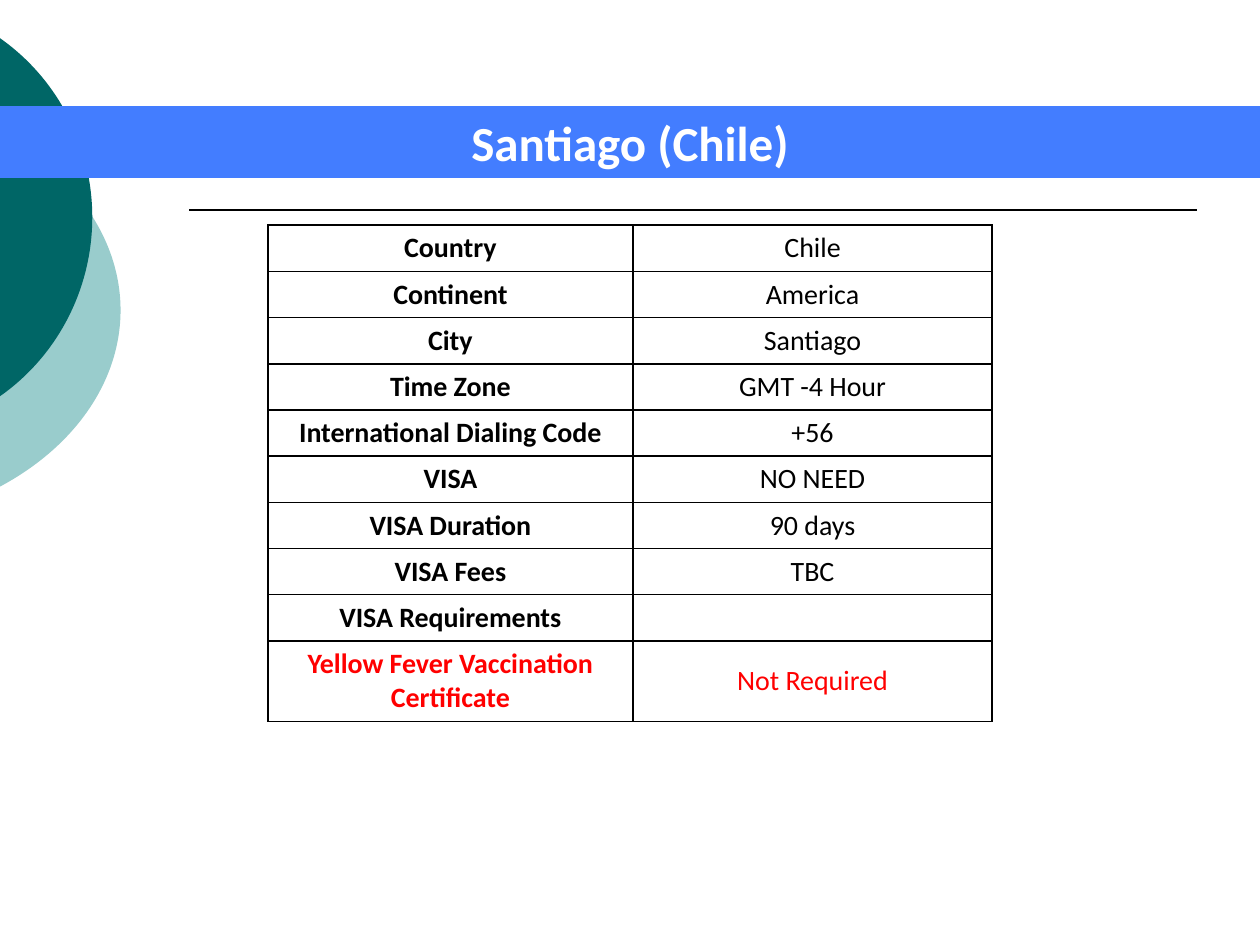
import math
from dataclasses import dataclass

from lxml import etree
from pptx import Presentation
from pptx.dml.color import RGBColor
from pptx.enum import shapes, text
from pptx.oxml import ns
from pptx.util import Cm, Pt


@dataclass(frozen=True)
class Theme:
    font: str = "Calibri"
    title_size: int = 28
    cell_size: int = 16
    line_width: int = 1
    light_teal: str = "99CCCC"
    dark_teal: str = "006666"
    banner: str = "437DFF"
    white: str = "FFFFFF"
    ink: str = "000000"
    alert: str = "FF0000"


THEME = Theme()
SLIDE_WIDTH, SLIDE_HEIGHT = 25.4, 19.05
CELL_MARGIN = 0.12
FACTS = [
    ("Country", "Chile"),
    ("Continent", "America"),
    ("City", "Santiago"),
    ("Time Zone", "GMT -4 Hour"),
    ("International Dialing Code", "+56"),
    ("VISA", "NO NEED"),
    ("VISA Duration", "90 days"),
    ("VISA Fees", "TBC"),
    ("VISA Requirements", ""),
    ("Yellow Fever Vaccination Certificate", "Not Required"),
]


def style_text(frame, size, color, bold):
    frame.vertical_anchor = text.MSO_ANCHOR.MIDDLE
    for paragraph in frame.paragraphs:
        paragraph.alignment = text.PP_ALIGN.CENTER
        for run in paragraph.runs:
            run.font.name = THEME.font
            run.font.size = Pt(size)
            run.font.bold = bold
            run.font.color.rgb = RGBColor.from_string(color)


def add_edge_disc(slide, left, top, width, height, color):
    """Draw the part of an ellipse that lies right of the slide's left edge."""
    radius_x, radius_y = width / 2, height / 2
    reach = math.acos(-(left + radius_x) / radius_x)
    handle = 4 / 3 * math.tan(reach / 4)

    def point(angle, pull=0):
        """Place a curve point, or its handle when pulled along the tangent."""
        across = math.cos(angle) - pull * math.sin(angle)
        down = math.sin(angle) + pull * math.cos(angle)
        return Cm(radius_x * (1 + across)), Cm(radius_y * (1 + down))

    builder = slide.shapes.build_freeform(0, 0)
    builder.add_line_segments([(Cm(width), 0), (Cm(width), Cm(height))])
    disc = builder.convert_to_shape(Cm(left), Cm(top))
    outline = disc._element.spPr.find(".//" + ns.qn("a:path"))
    for segment in list(outline):
        outline.remove(segment)
    segments = [("moveTo", [point(-reach)])]
    for start, end in ((-reach, 0), (0, reach)):
        segments.append(("cubicBezTo", [point(start, handle), point(end, -handle), point(end)]))
    for tag, points in segments + [("close", [])]:
        segment = etree.SubElement(outline, ns.qn(f"a:{tag}"))
        for x, y in points:
            etree.SubElement(segment, ns.qn("a:pt"), x=str(int(x)), y=str(int(y)))
    disc.shadow.inherit = False
    disc.fill.solid()
    disc.fill.fore_color.rgb = RGBColor.from_string(color)
    disc.line.fill.background()


def add_rule(slide, left, top, width):
    rule = slide.shapes.add_connector(
        shapes.MSO_CONNECTOR.STRAIGHT, Cm(left), Cm(top), Cm(left + width), Cm(top))
    rule.line.color.rgb = RGBColor.from_string(THEME.ink)
    rule.line.width = Pt(THEME.line_width)
    etree.SubElement(rule._element.spPr, ns.qn("a:effectLst"))


def add_banner(slide, left, top, width, height, title):
    banner = slide.shapes.add_shape(
        shapes.MSO_SHAPE.RECTANGLE, Cm(left), Cm(top), Cm(width), Cm(height))
    banner.shadow.inherit = False
    banner.fill.solid()
    banner.fill.fore_color.rgb = RGBColor.from_string(THEME.banner)
    banner.line.fill.background()
    banner.text_frame.text = title
    style_text(banner.text_frame, THEME.title_size, THEME.white, True)


def add_borders(cell):
    properties = cell._tc.get_or_add_tcPr()
    for side in ("lnL", "lnR", "lnT", "lnB"):
        border = etree.SubElement(properties, ns.qn(f"a:{side}"), w=str(Pt(THEME.line_width)))
        fill = etree.SubElement(border, ns.qn("a:solidFill"))
        etree.SubElement(fill, ns.qn("a:srgbClr"), val=THEME.ink)


def add_facts_table(slide, left, top, column_widths, row_height, last_height):
    height = row_height * (len(FACTS) - 1) + last_height
    table = slide.shapes.add_table(
        len(FACTS), len(column_widths), Cm(left), Cm(top),
        Cm(sum(column_widths)), Cm(height)).table
    table.first_row = table.horz_banding = False
    for column, width in zip(table.columns, column_widths):
        column.width = Cm(width)
    last = len(FACTS) - 1
    for row, fact in enumerate(FACTS):
        table.rows[row].height = Cm(last_height if row == last else row_height)
        for column, entry in enumerate(fact):
            cell = table.cell(row, column)
            add_borders(cell)
            cell.fill.background()
            cell.vertical_anchor = text.MSO_ANCHOR.MIDDLE
            # An empty cell must not stretch its row
            cell.margin_top = cell.margin_bottom = Cm(CELL_MARGIN if entry else 0)
            cell.text_frame.text = entry
            color = THEME.alert if row == last else THEME.ink
            style_text(cell.text_frame, THEME.cell_size, color, column == 0)


def main():
    deck = Presentation()
    deck.slide_width, deck.slide_height = Cm(SLIDE_WIDTH), Cm(SLIDE_HEIGHT)
    slide = deck.slides.add_slide(deck.slide_layouts[6])
    add_edge_disc(slide, -9, 1.91, 11.43, 8.69, THEME.light_teal)
    add_edge_disc(slide, -6.73, 0, 8.59, 8.76, THEME.dark_teal)
    add_rule(slide, 3.81, 4.24, 20.32)
    add_banner(slide, 0, 2.14, SLIDE_WIDTH, 1.45, "Santiago (Chile)")
    add_facts_table(slide, 5.4, 4.54, (7.36, 7.24), 0.93, 1.62)
    deck.save("out.pptx")


if __name__ == "__main__":
    main()
